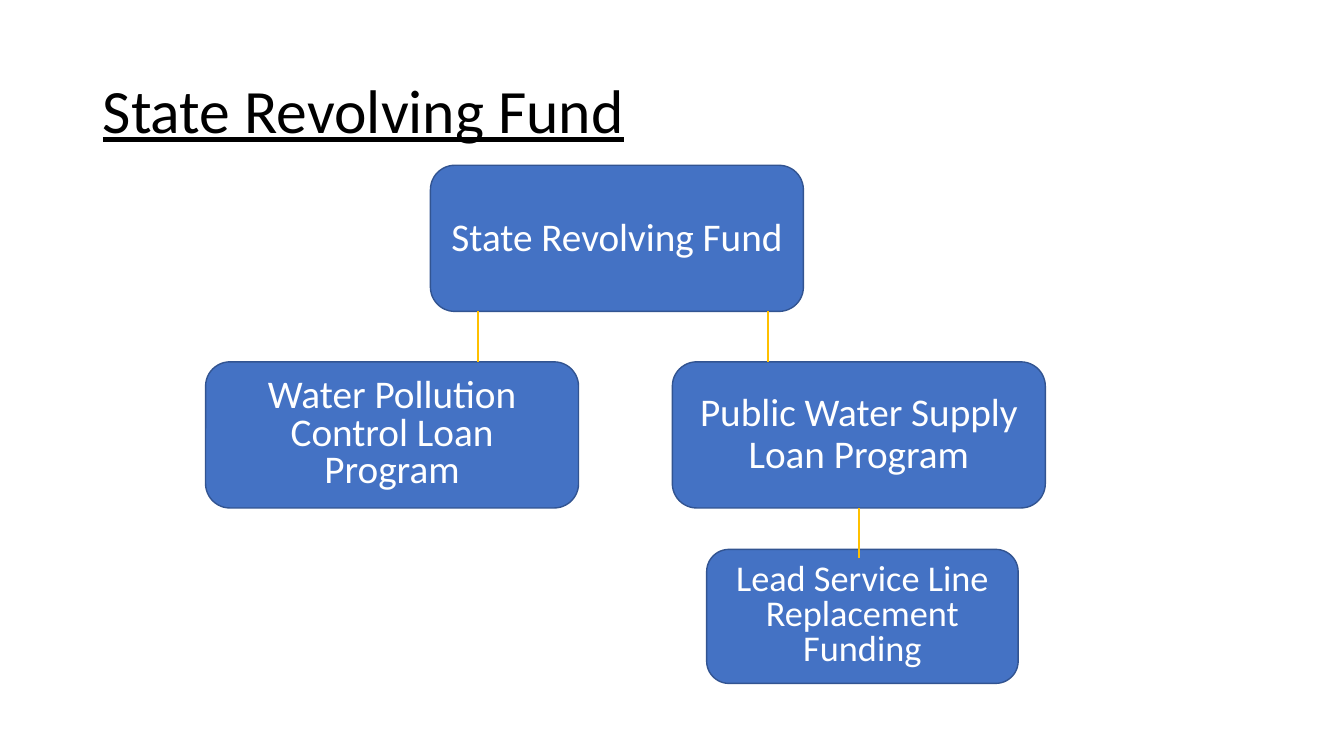
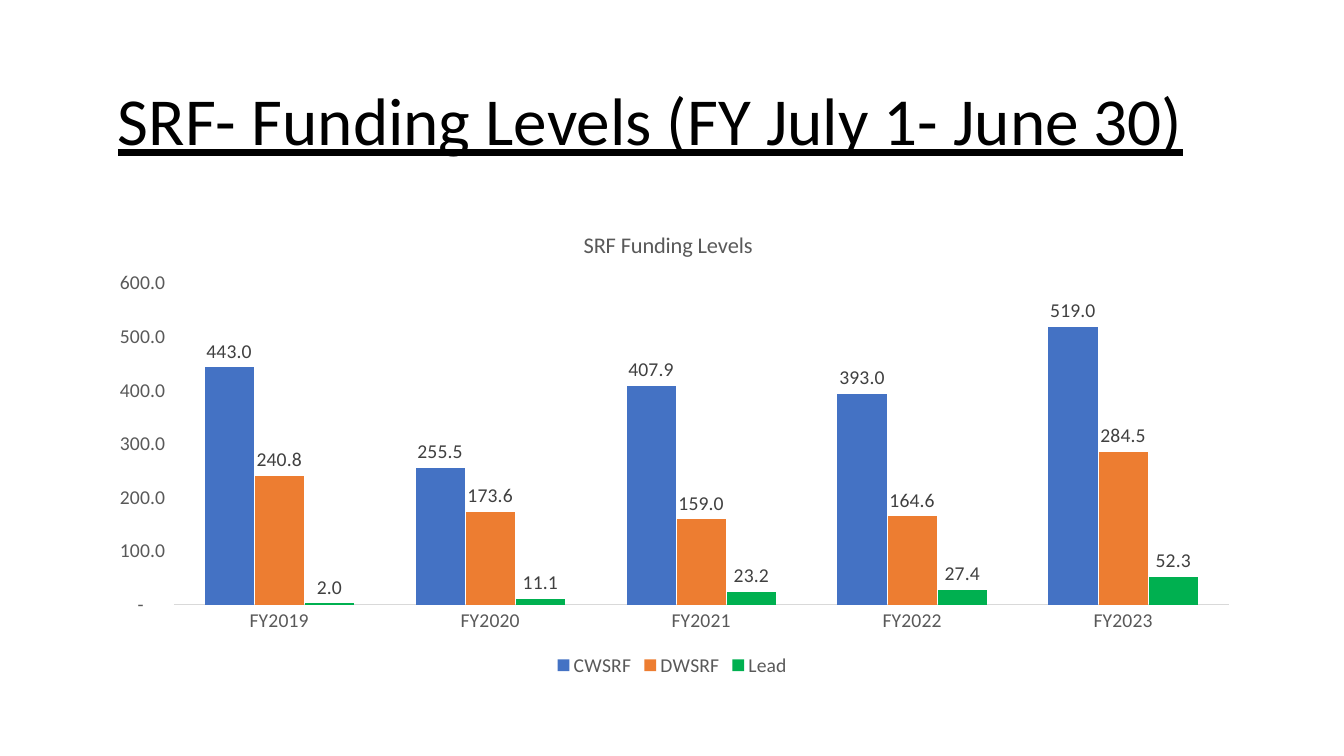
from dataclasses import dataclass

from lxml.etree import SubElement
from pptx import Presentation
from pptx.chart.chart import Chart
from pptx.chart.data import CategoryChartData
from pptx.dml.color import RGBColor
from pptx.enum.chart import (XL_CHART_TYPE, XL_LABEL_POSITION,
                             XL_LEGEND_POSITION, XL_TICK_MARK)
from pptx.enum.shapes import MSO_CONNECTOR, MSO_SHAPE
from pptx.enum.text import MSO_ANCHOR, MSO_AUTO_SIZE, PP_ALIGN
from pptx.oxml.ns import qn
from pptx.slide import Slide
from pptx.text.text import Font
from pptx.util import Inches, Pt

SLIDE_W, SLIDE_H = Inches(13.333), Inches(7.5)


@dataclass(frozen=True)
class Theme:
    font: str = "Calibri"
    ink: str = "000000"
    paper: str = "FFFFFF"
    blue: str = "4472C4"
    blue_edge: str = "325491"
    orange: str = "ED7D31"
    green: str = "00B050"
    gold: str = "FFC000"
    axis_text: str = "595959"
    label_text: str = "404040"
    axis_line: str = "D9D9D9"
    chart_title_size: float = 16
    chart_size: float = 14


THEME = Theme()


@dataclass(frozen=True)
class Area:
    """A rectangle in percent of the slide's width and height."""
    left: float
    top: float
    width: float
    height: float

    @property
    def bottom(self) -> float:
        return self.top + self.height

    def lengths(self) -> tuple[int, int, int, int]:
        return (across(self.left), down(self.top),
                across(self.width), down(self.height))


@dataclass(frozen=True)
class Program:
    label: str
    area: Area
    size: float = 28
    spacing: float = 0.9


@dataclass(frozen=True)
class Link:
    parent: Program
    x: float


@dataclass(frozen=True)
class Fund:
    name: str
    color: str
    amounts: tuple[float, ...]
    label_format: str


# Organisation chart: two equal rows, with one smaller box below
MARGIN, CONTENT_W = 6.9, 86.25
BOX_W, BOX_H, ROW_GAP = 27.75, 19.33, 6.67
FIRST_ROW = 21.87
SECOND_ROW = FIRST_ROW + BOX_H + ROW_GAP

STATE_FUND = Program("State Revolving Fund",
                     Area(32.03, FIRST_ROW, BOX_W, BOX_H))
POLLUTION = Program("Water Pollution Control Loan Program",
                    Area(15.3, SECOND_ROW, BOX_W, BOX_H), spacing=0.8)
SUPPLY = Program("Public Water Supply Loan Program",
                 Area(50.03, SECOND_ROW, BOX_W, BOX_H))
LEAD_LINES = Program("Lead Service Line Replacement Funding",
                     Area(52.58, 72.67, 23.18, 17.73), 25.9, 0.8)
PROGRAMS = (STATE_FUND, POLLUTION, SUPPLY, LEAD_LINES)
LINKS = (Link(STATE_FUND, 35.55), Link(STATE_FUND, 57.15), Link(SUPPLY, 63.9))

# Funding data
ACCOUNTING = '_(* #,##0.0_);_(* \\(#,##0.0\\);_(* "-"??_);_(@_)'
YEARS = tuple(f"FY{year}" for year in range(2019, 2024))
FUNDS = (
    Fund("CWSRF", THEME.blue, (443, 255.5, 407.9, 393, 519), ACCOUNTING),
    Fund("DWSRF", THEME.orange, (240.8, 173.6, 159, 164.6, 284.5), ACCOUNTING),
    Fund("Lead", THEME.green, (2, 11.1, 23.2, 27.4, 52.3), "0.0"),
)


def across(percent: float) -> int:
    return round(SLIDE_W * percent / 100)


def down(percent: float) -> int:
    return round(SLIDE_H * percent / 100)


def rgb(color: str) -> RGBColor:
    return RGBColor.from_string(color)


def style_font(font: Font, size: float, color: str) -> None:
    font.name = THEME.font
    font.size = Pt(size)
    font.bold = False
    font.color.rgb = rgb(color)


def add_titled_slide(deck: Presentation, text: str, area: Area, size: float,
                     align: PP_ALIGN, right_inset: float = 0.1) -> Slide:
    slide = deck.slides.add_slide(deck.slide_layouts[5])
    title = slide.shapes.title
    title.left, title.top, title.width, title.height = area.lengths()
    frame = title.text_frame
    frame.auto_size = MSO_AUTO_SIZE.NONE
    frame.word_wrap = True
    frame.vertical_anchor = MSO_ANCHOR.MIDDLE
    frame.margin_right = Inches(right_inset)
    heading = frame.paragraphs[0]
    heading.alignment = align
    heading.line_spacing = 0.9
    run = heading.add_run()
    run.text = text
    style_font(run.font, size, THEME.ink)
    run.font.underline = True
    return slide


def add_program(slide: Slide, program: Program) -> None:
    box = slide.shapes.add_shape(MSO_SHAPE.ROUNDED_RECTANGLE,
                                 *program.area.lengths())
    box.shadow.inherit = False
    box.fill.solid()
    box.fill.fore_color.rgb = rgb(THEME.blue)
    box.line.color.rgb = rgb(THEME.blue_edge)
    box.line.width = Pt(1)
    frame = box.text_frame
    frame.word_wrap = True
    frame.vertical_anchor = MSO_ANCHOR.MIDDLE
    label = frame.paragraphs[0]
    label.alignment = PP_ALIGN.CENTER
    label.line_spacing = program.spacing
    label.space_before = Pt(10)
    run = label.add_run()
    run.text = program.label
    style_font(run.font, program.size, THEME.paper)


def add_link(slide: Slide, link: Link) -> None:
    start = link.parent.area.bottom
    line = slide.shapes.add_connector(
        MSO_CONNECTOR.STRAIGHT, across(link.x), down(start),
        across(link.x), down(start + ROW_GAP))
    line.line.color.rgb = rgb(THEME.gold)
    line.line.width = Pt(1.5)
    SubElement(line.element.spPr, qn("a:effectLst"))


def place_chart_part(chart: Chart, tag: str, index: int,
                     **settings: str | float) -> None:
    """Give the chart title or plot area a fixed layout."""
    part = chart.element.find(f".//{qn(tag)}")
    for automatic in part.findall(qn("c:layout")):
        part.remove(automatic)
    layout = SubElement(part, qn("c:layout"))
    part.insert(index, layout)
    manual = SubElement(layout, qn("c:manualLayout"))
    for name, value in settings.items():
        SubElement(manual, qn(f"c:{name}")).set("val", str(value))


def add_funding_chart(slide: Slide, area: Area) -> None:
    data = CategoryChartData()
    data.categories = YEARS
    for fund in FUNDS:
        data.add_series(fund.name, fund.amounts)
    chart = slide.shapes.add_chart(XL_CHART_TYPE.COLUMN_CLUSTERED,
                                   *area.lengths(), data).chart
    style_font(chart.font, THEME.chart_size, THEME.ink)

    # Chart title and legend
    chart.has_title = True
    run = chart.chart_title.text_frame.paragraphs[0].add_run()
    run.text = "SRF Funding Levels"
    style_font(run.font, THEME.chart_title_size, THEME.axis_text)
    chart.has_legend = True
    chart.legend.position = XL_LEGEND_POSITION.BOTTOM
    chart.legend.include_in_layout = False
    style_font(chart.legend.font, THEME.chart_size, THEME.axis_text)

    # Axes
    years, amounts = chart.category_axis, chart.value_axis
    for axis in (years, amounts):
        axis.major_tick_mark = axis.minor_tick_mark = XL_TICK_MARK.NONE
        axis.has_major_gridlines = False
        style_font(axis.tick_labels.font, THEME.chart_size, THEME.axis_text)
    years.format.line.color.rgb = rgb(THEME.axis_line)
    years.format.line.width = Pt(0.75)
    amounts.format.line.fill.background()
    amounts.minimum_scale, amounts.maximum_scale = 0, 600
    amounts.major_unit = 100
    amounts.tick_labels.number_format = ACCOUNTING
    amounts.tick_labels.number_format_is_linked = False

    # Columns and their values
    plot = chart.plots[0]
    plot.gap_width, plot.overlap = 125, -2
    plot.vary_by_categories = False
    for fund, series in zip(FUNDS, plot.series):
        series.format.fill.solid()
        series.format.fill.fore_color.rgb = rgb(fund.color)
        labels = series.data_labels
        labels.show_value = True
        labels.position = XL_LABEL_POSITION.OUTSIDE_END
        labels.number_format = fund.label_format
        labels.number_format_is_linked = False
        style_font(labels.font, THEME.chart_size, THEME.label_text)

    place_chart_part(chart, "c:title", 1,
                     xMode="edge", yMode="edge", x=0.42, y=0.05)
    place_chart_part(chart, "c:plotArea", 0, layoutTarget="inner",
                     xMode="edge", yMode="edge",
                     x=0.07, y=0.17, w=0.91, h=0.67)


def main() -> None:
    deck = Presentation()
    deck.slide_width, deck.slide_height = SLIDE_W, SLIDE_H

    # Structure of the fund
    structure = add_titled_slide(
        deck, "State Revolving Fund",
        Area(MARGIN, 5.33, CONTENT_W, 19.33), 44, PP_ALIGN.LEFT)
    for program in PROGRAMS:
        add_program(structure, program)
    for link in LINKS:
        add_link(structure, link)

    # Funding by year
    funding = add_titled_slide(
        deck, "SRF- Funding Levels (FY July 1- June 30)",
        Area(MARGIN, 8.13, CONTENT_W, 16.53), 48, PP_ALIGN.CENTER, 0.53)
    add_funding_chart(funding, Area(MARGIN, 26.67, CONTENT_W, 63.47))

    deck.save("out.pptx")


if __name__ == "__main__":
    main()
